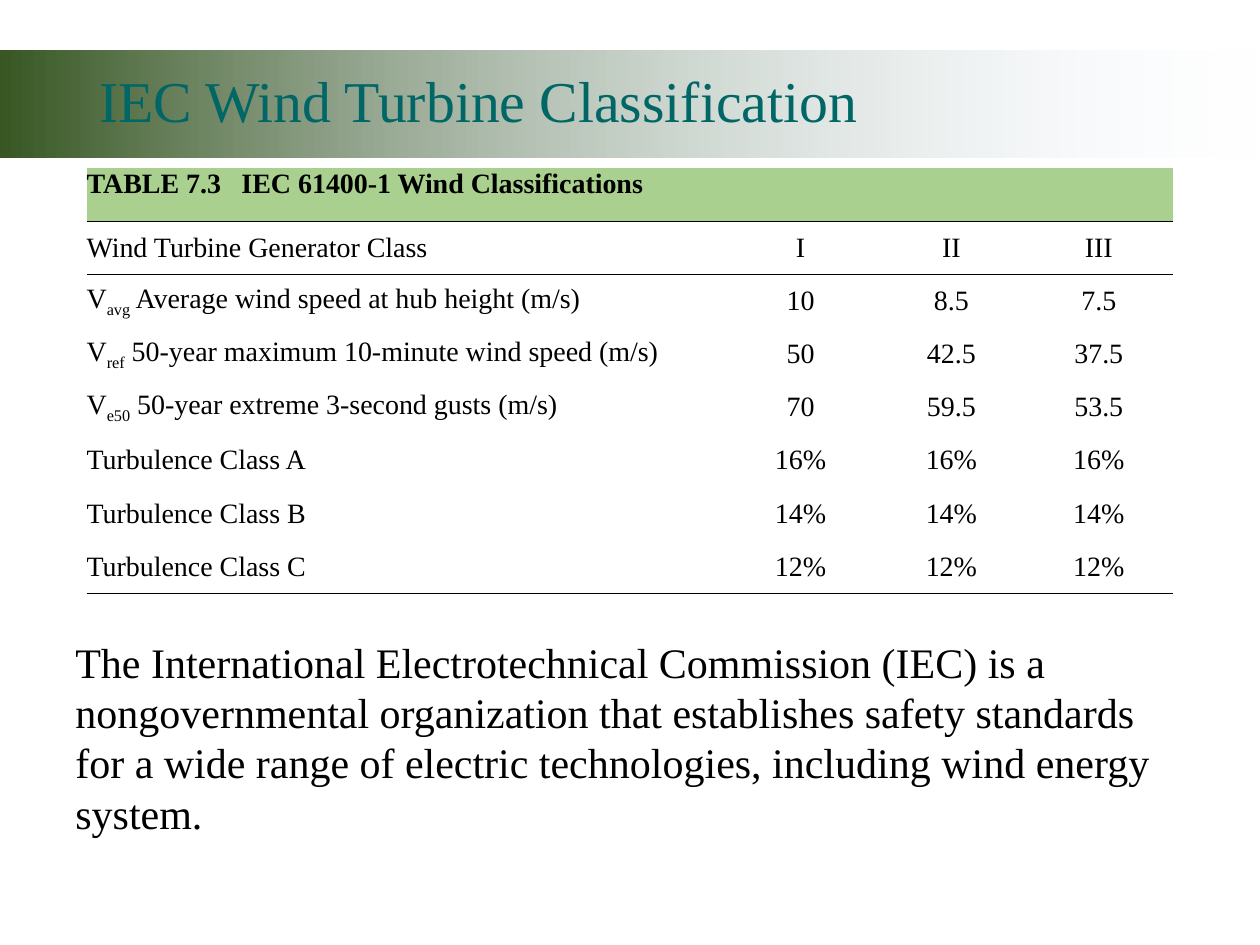
from dataclasses import dataclass

from lxml import etree
from pptx import Presentation
from pptx import util as u
from pptx.dml import color
from pptx.enum import shapes, text
from pptx.oxml import ns

FONT = "Times New Roman"
BLACK = "000000"
PLAIN_TABLE = "{2D5ABB26-0587-4C30-8999-92F81FD0307C}"
COLUMN_WIDTHS = (364, 88, 84.3, 84.3)
ROW_HEIGHT = 30.4


@dataclass(frozen=True)
class Row:
    label: str
    values: tuple[str, ...]
    symbol: str = ""
    subscript: str = ""


ROWS = (
    Row("Wind Turbine Generator Class", ("I", "II", "III")),
    Row(" Average wind speed at hub height (m/s)", ("10", "8.5", "7.5"), "V", "avg"),
    Row(" 50-year maximum 10-minute wind speed (m/s)", ("50", "42.5", "37.5"), "V", "ref"),
    Row(" 50-year extreme 3-second gusts (m/s)", ("70", "59.5", "53.5"), "V", "e50"),
    Row("Turbulence Class A", ("16%",) * 3),
    Row("Turbulence Class B", ("14%",) * 3),
    Row("Turbulence Class C", ("12%",) * 3),
)
RULED_BELOW = {0, 1, len(ROWS)}


def rgb(value: str) -> color.RGBColor:
    return color.RGBColor.from_string(value)


def place(box, left: float, top: float, width: float, height: float) -> None:
    box.left, box.top = u.Pt(left), u.Pt(top)
    box.width, box.height = u.Pt(width), u.Pt(height)


def add_span(para, words: str, size: float, hue: str = BLACK,
             bold: bool = False, subscript: bool = False) -> None:
    span = para.add_run()
    span.text = words
    font = span.font
    font.name, font.size, font.bold = FONT, u.Pt(size), bold
    font.color.rgb = rgb(hue)
    if subscript:
        font._element.set("baseline", "-25000")


def add_band(page) -> None:
    band = page.shapes.add_shape(shapes.MSO_SHAPE.RECTANGLE,
                                 u.Pt(0), u.Pt(28.8), u.Pt(720), u.Pt(61.2))
    band.shadow.inherit = False
    band.line.fill.background()
    band.fill.gradient()
    band.fill.gradient_angle = 0
    for stop, hue, position in zip(band.fill.gradient_stops, ("385723", "E1EBFB"), (0, 1)):
        stop.color.rgb = rgb(hue)
        stop.position = position
    # The right end fades out completely
    last_color = band._element.findall(".//" + ns.qn("a:srgbClr"))[-1]
    etree.SubElement(last_color, ns.qn("a:alpha")).set("val", "0")
    # Send the band behind the title
    page.shapes._spTree.insert(2, band._element)


def add_title(page, words: str) -> None:
    title = page.shapes.title
    place(title, 49.5, 28.8, 621, 61.2)
    frame = title.text_frame
    frame.auto_size = text.MSO_AUTO_SIZE.NONE
    frame.vertical_anchor = text.MSO_ANCHOR.MIDDLE
    para = frame.paragraphs[0]
    para.alignment = text.PP_ALIGN.LEFT
    para.line_spacing = 0.9
    add_span(para, words, 33, "006666")


def rule_cell(cell, ruled_sides: set[str]) -> None:
    properties = cell._tc.get_or_add_tcPr()
    for index, side in enumerate(("lnL", "lnR", "lnT", "lnB")):
        line = etree.Element(ns.qn("a:" + side), w=str(u.Pt(0.5)))
        if side in ruled_sides:
            fill = etree.SubElement(line, ns.qn("a:solidFill"))
            etree.SubElement(fill, ns.qn("a:srgbClr"), val=BLACK)
        else:
            etree.SubElement(line, ns.qn("a:noFill"))
        properties.insert(index, line)


def add_classes(page) -> None:
    row_count = len(ROWS) + 1
    frame = page.shapes.add_table(row_count, len(COLUMN_WIDTHS), u.Pt(49.5), u.Pt(96),
                                  u.Pt(sum(COLUMN_WIDTHS)), u.Pt(ROW_HEIGHT * row_count))
    table = frame.table
    table.first_row = table.horz_banding = False
    table._tbl.tblPr.find(ns.qn("a:tableStyleId")).text = PLAIN_TABLE
    for column, width in zip(table.columns, COLUMN_WIDTHS):
        column.width = u.Pt(width)

    # Margins, fills and rules
    for row_index, table_row in enumerate(table.rows):
        table_row.height = u.Pt(ROW_HEIGHT)
        sides = {"lnB"} if row_index in RULED_BELOW else set()
        if row_index - 1 in RULED_BELOW:
            sides.add("lnT")
        for cell in table_row.cells:
            cell.margin_left = cell.margin_right = cell.margin_top = cell.margin_bottom = 0
            if row_index == 0:
                cell.fill.solid()
                cell.fill.fore_color.rgb = rgb("A9D08E")
            else:
                cell.fill.background()
                cell.vertical_anchor = text.MSO_ANCHOR.MIDDLE
            rule_cell(cell, sides)

    # Caption row, with a tab stop after the table number
    caption = table.cell(0, 0)
    caption.merge(table.cell(0, len(COLUMN_WIDTHS) - 1))
    para = caption.text_frame.paragraphs[0]
    tabs = etree.SubElement(para._p.get_or_add_pPr(), ns.qn("a:tabLst"))
    etree.SubElement(tabs, ns.qn("a:tab"), pos=str(u.Pt(88.5)), algn="l")
    add_span(para, "TABLE 7.3\tIEC 61400-1 Wind Classifications", 16, bold=True)

    # Class rows
    for row_index, row in enumerate(ROWS, start=1):
        para = table.cell(row_index, 0).text_frame.paragraphs[0]
        if row.symbol:
            add_span(para, row.symbol, 16)
            add_span(para, row.subscript, 16, subscript=True)
        add_span(para, row.label, 16)
        for column_index, value in enumerate(row.values, start=1):
            para = table.cell(row_index, column_index).text_frame.paragraphs[0]
            para.alignment = text.PP_ALIGN.CENTER
            add_span(para, value, 16)


def add_note(page, words: str) -> None:
    box = page.shapes.add_textbox(u.Pt(36), u.Pt(360), u.Pt(642), u.Pt(124))
    frame = box.text_frame
    frame.word_wrap = True
    frame.auto_size = text.MSO_AUTO_SIZE.SHAPE_TO_FIT_TEXT
    add_span(frame.paragraphs[0], words, 24)


def main() -> None:
    deck = Presentation()
    deck.slide_width, deck.slide_height = u.Pt(720), u.Pt(540)
    page = deck.slides.add_slide(deck.slide_layouts.get_by_name("Title Only"))
    add_band(page)
    add_title(page, "IEC Wind Turbine Classification")
    add_classes(page)
    add_note(page, "The International Electrotechnical Commission (IEC) is a "
                   "nongovernmental organization that establishes safety standards "
                   "for a wide range of electric technologies, including wind energy system.")
    deck.save("out.pptx")


if __name__ == "__main__":
    main()
